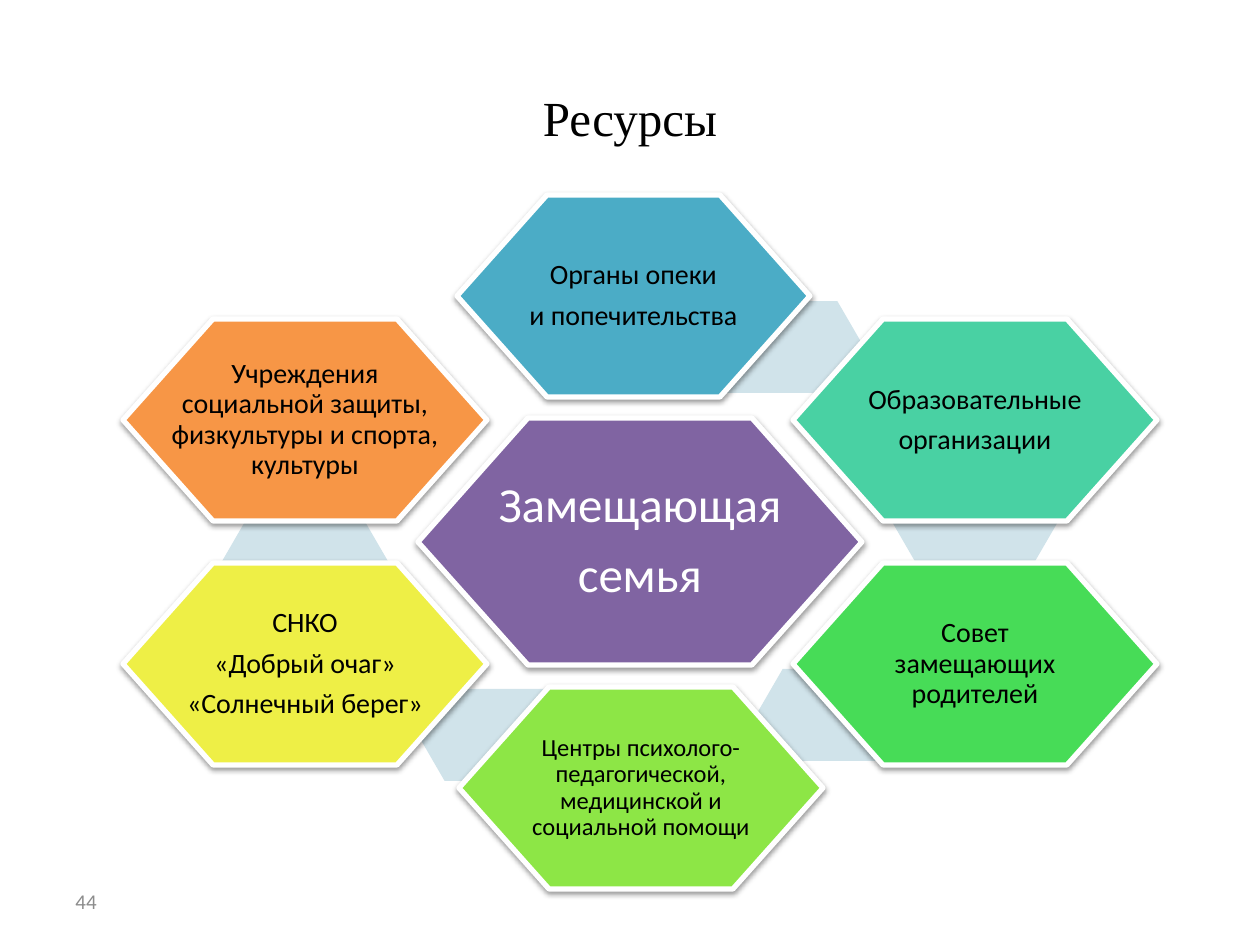
from lxml import etree
from pptx import Presentation
from pptx.dml.color import RGBColor
from pptx.enum.shapes import MSO_SHAPE
from pptx.enum.text import MSO_ANCHOR, PP_ALIGN
from pptx.oxml.ns import qn
from pptx.util import Emu, Pt

HEXAGON = MSO_SHAPE.HEXAGON
MIDDLE = MSO_ANCHOR.MIDDLE
LEFT, CENTER = PP_ALIGN.LEFT, PP_ALIGN.CENTER

BLACK = RGBColor(0x00, 0x00, 0x00)
WHITE = RGBColor(0xFF, 0xFF, 0xFF)
GRAY = RGBColor(0x8C, 0x8C, 0x8C)
PALE_BLUE = RGBColor(0xD0, 0xE3, 0xEA)
PURPLE = RGBColor(0x80, 0x64, 0xA2)
BLUE = RGBColor(0x4B, 0xAC, 0xC6)
TEAL = RGBColor(0x49, 0xD1, 0xA3)
GREEN = RGBColor(0x47, 0xDC, 0x57)
LIME = RGBColor(0x8D, 0xE6, 0x46)
YELLOW = RGBColor(0xEE, 0xEF, 0x46)
ORANGE = RGBColor(0xF7, 0x96, 0x46)

SCALE = 914400 / 126  # EMU per px
SLIDE_SIZE = (1260, 945)

# Left, top, width, height
TITLE_BOX = (63, 38, 1134, 157)
NUMBER_BOX = (63, 876, 294, 50)
CENTER_BOX = (418, 418, 444, 247)
RESOURCE_WIDTH, RESOURCE_HEIGHT = 364, 202
LEFT_X, RIGHT_X = 123, 793
UPPER_Y, LOWER_Y = 319, 563
LINK_SIZE = (168, 92)
LINK_CORNERS = [(696, 301), (891, 474), (756, 669), (418, 689), (221, 517)]

# Left, top, width, colour, text size, space after as a share of size, paragraphs
RESOURCES = [
    (457, 195, 353, BLUE, 16, 0.35, ["Органы опеки", "и попечительства"]),
    (RIGHT_X, UPPER_Y, RESOURCE_WIDTH, TEAL, 16, 0.35,
     ["Образовательные", "организации"]),
    (RIGHT_X, LOWER_Y, RESOURCE_WIDTH, GREEN, 16, 0,
     ["Совет", "замещающих родителей"]),
    (459, 687, RESOURCE_WIDTH, LIME, 14, 0.35,
     ["Центры психолого-педагогической, медицинской и социальной помощи"]),
    (LEFT_X, LOWER_Y, RESOURCE_WIDTH, YELLOW, 16, 0.35,
     ["СНКО", "«Добрый очаг»", "«Солнечный берег»"]),
    (LEFT_X, UPPER_Y, RESOURCE_WIDTH, ORANGE, 16, 0,
     ["Учреждения социальной защиты, физкультуры и спорта,", "культуры"]),
]


def px(value):
    return Emu(round(value * SCALE))


def write(shape, paragraphs, size, color, font="Calibri", align=CENTER,
          line_spacing=1.0, gap=0):
    frame = shape.text_frame
    frame.word_wrap = True
    frame.vertical_anchor = MIDDLE
    for index, text in enumerate(paragraphs):
        paragraph = frame.add_paragraph() if index else frame.paragraphs[0]
        paragraph.alignment = align
        paragraph.line_spacing = line_spacing
        paragraph.space_after = Pt(round(size * gap, 1))
        run = paragraph.add_run()
        run.text = text
        run.font.size = Pt(size)
        run.font.name = font
        run.font.color.rgb = color


def add_shadow(shape):
    shape.shadow.inherit = False
    effects = shape._element.spPr.find(qn("a:effectLst"))
    shadow = etree.SubElement(effects, qn("a:outerShdw"), blurRad="40000",
                              dist="20000", dir="5400000", rotWithShape="0")
    color = etree.SubElement(shadow, qn("a:srgbClr"), val="000000")
    etree.SubElement(color, qn("a:alpha"), val="38000")


def add_hexagon(slide, box, slant, fill, insets, paragraphs, size, color, gap):
    left, top, width, height = box
    right, bottom, middle = left + width, top + height, top + height / 2
    builder = slide.shapes.build_freeform(left, middle, scale=SCALE)
    builder.add_line_segments([
        (left + slant, top), (right - slant, top), (right, middle),
        (right - slant, bottom), (left + slant, bottom),
    ], close=True)
    shape = builder.convert_to_shape()
    shape.fill.solid()
    shape.fill.fore_color.rgb = fill
    shape.line.color.rgb = WHITE
    shape.line.width = Pt(3)
    add_shadow(shape)
    frame = shape.text_frame
    frame.margin_left = frame.margin_right = px(insets[0])
    frame.margin_top = frame.margin_bottom = px(insets[1])
    write(shape, paragraphs, size, color, line_spacing=0.9, gap=gap)


def add_link(slide, corner):
    shape = slide.shapes.add_shape(HEXAGON, *map(px, corner + LINK_SIZE))
    shape.adjustments[0] = 0.29
    shape.fill.solid()
    shape.fill.fore_color.rgb = PALE_BLUE
    shape.line.fill.background()
    shape.shadow.inherit = False


def main():
    presentation = Presentation()
    presentation.slide_width, presentation.slide_height = map(px, SLIDE_SIZE)
    slide = presentation.slides.add_slide(presentation.slide_layouts[6])

    # Family in the centre, links behind the ring of resources
    add_hexagon(slide, CENTER_BOX, 110, PURPLE, (50, 44),
                ["Замещающая", "семья"], 28, WHITE, 0.35)
    for corner in LINK_CORNERS:
        add_link(slide, corner)
    for left, top, width, fill, size, gap, paragraphs in RESOURCES:
        add_hexagon(slide, (left, top, width, RESOURCE_HEIGHT), 90, fill,
                    (40, 35), paragraphs, size, BLACK, gap)

    # Title and slide number
    title = slide.shapes.add_textbox(*map(px, TITLE_BOX))
    write(title, ["Ресурсы"], 28, BLACK, font="Times New Roman")
    number = slide.shapes.add_textbox(*map(px, NUMBER_BOX))
    write(number, ["44"], 12, GRAY, align=LEFT)

    presentation.save("out.pptx")


if __name__ == "__main__":
    main()
